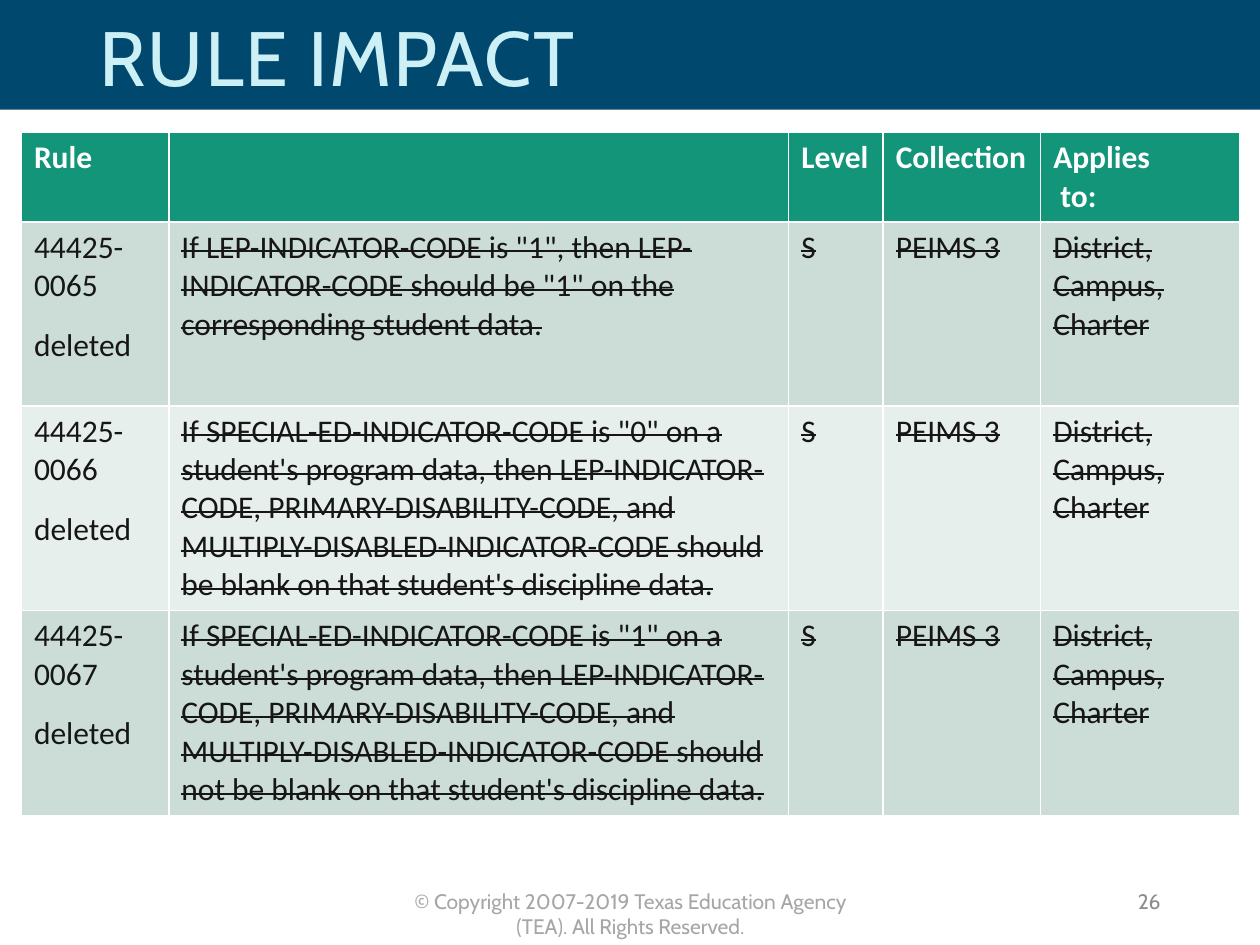
from pptx import Presentation
from pptx.dml.color import RGBColor as RGB
from pptx.enum.shapes import MSO_SHAPE as Shape
from pptx.enum.text import MSO_ANCHOR as Anchor, PP_ALIGN as Align
from pptx.util import Inches, Pt

NAVY = RGB(0x00, 0x48, 0x6E)
ICE = RGB(0xCC, 0xF0, 0xF5)
GREEN = RGB(0x12, 0x95, 0x79)
SAGE = RGB(0xCC, 0xDD, 0xD7)
MIST = RGB(0xE7, 0xEF, 0xEC)
WHITE = RGB(0xFF, 0xFF, 0xFF)
INK = RGB(0x17, 0x16, 0x16)
SILVER = RGB(0xA6, 0xA6, 0xA6)
GRAY = RGB(0x8C, 0x8C, 0x8C)

HEADS = ["Rule", "", "Level", "Collection", "Applies\n to:"]
LEAD = 'If SPECIAL-ED-INDICATOR-CODE is "{}" on a student\'s program data, then '
TAIL = ("LEP-INDICATOR-CODE, PRIMARY-DISABILITY-CODE, and "
        "MULTIPLY-DISABLED-INDICATOR-CODE should {} on that student's discipline data.")
RULES = [
    ("44425-0065", 'If LEP-INDICATOR-CODE is "1", then LEP-INDICATOR-CODE '
                   'should be "1" on the corresponding student data.'),
    ("44425-0066", LEAD.format(0) + TAIL.format("be blank")),
    ("44425-0067", LEAD.format(1) + TAIL.format("not be blank")),
]
COLS = [1.17, 4.92, 0.75, 1.25, 1.58]
ROWS = [0.64, 1.46, 1.46, 1.46]


def style(frame, font, size, color, bold=False, strike=False):
    for par in frame.paragraphs:
        for run in par.runs:
            run.font.name, run.font.size = font, Pt(size)
            run.font.color.rgb, run.font.bold = color, bold
            if strike:
                run._r.get_or_add_rPr().set("strike", "sngStrike")


def add_note(text, left, top, width, height, align, anchor, color):
    box = slide.shapes.add_textbox(*map(Inches, (left, top, width, height)))
    frame = box.text_frame
    frame.word_wrap, frame.vertical_anchor = True, anchor
    frame.text = text
    frame.paragraphs[0].alignment = align
    style(frame, "Cabin", 12, color)


deck = Presentation()
deck.slide_width, deck.slide_height = Inches(10), Inches(7.5)
slide = deck.slides.add_slide(deck.slide_layouts[5])

# Band and title
band = slide.shapes.add_shape(Shape.RECTANGLE, 0, 0, deck.slide_width, Inches(0.87))
band.shadow.inherit = False
band.fill.solid()
band.fill.fore_color.rgb = NAVY
band.line.fill.background()

title = slide.shapes.title
band._element.addnext(title._element)
title.left, title.top = Inches(0.69), Inches(0.05)
title.width, title.height = Inches(8), Inches(0.87)
frame = title.text_frame
frame.text = "RULE IMPACT"
frame.vertical_anchor = Anchor.MIDDLE
frame.paragraphs[0].alignment = Align.LEFT
frame.paragraphs[0].line_spacing = 0.9
style(frame, "Cabin", 44, ICE)
frame.paragraphs[0].runs[0]._r.get_or_add_rPr().set("spc", "100")

# Rule table
grid = slide.shapes.add_table(len(ROWS), len(COLS), Inches(0.17), Inches(1.05),
                              Inches(sum(COLS)), Inches(sum(ROWS))).table
for col, width in zip(grid.columns, COLS):
    col.width = Inches(width)
for row, height in zip(grid.rows, ROWS):
    row.height = Inches(height)

lines = [HEADS] + [[code + "\ndeleted", text, "S", "PEIMS 3", "District, Campus,\nCharter"]
                   for code, text in RULES]
for r, line in enumerate(lines):
    for c, text in enumerate(line):
        cell = grid.cell(r, c)
        cell.fill.solid()
        cell.fill.fore_color.rgb = GREEN if r == 0 else SAGE if r % 2 else MIST
        frame = cell.text_frame
        frame.text = text
        style(frame, "Calibri", 18, INK if r else WHITE, bold=r == 0, strike=r > 0 and c > 0)
        if r and c == 0:
            frame.paragraphs[0].space_after = Pt(6)
            frame.paragraphs[1].space_before = Pt(6)
        if r:
            frame.paragraphs[-1].space_after = Pt(6)

# Footer
add_note("© Copyright 2007-2019 Texas Education Agency (TEA). All Rights Reserved.",
         3.04, 7, 3.93, 0.3, Align.CENTER, Anchor.TOP, SILVER)
add_note("26", 7.06, 6.95, 2.25, 0.4, Align.RIGHT, Anchor.MIDDLE, GRAY)

deck.save("out.pptx")
